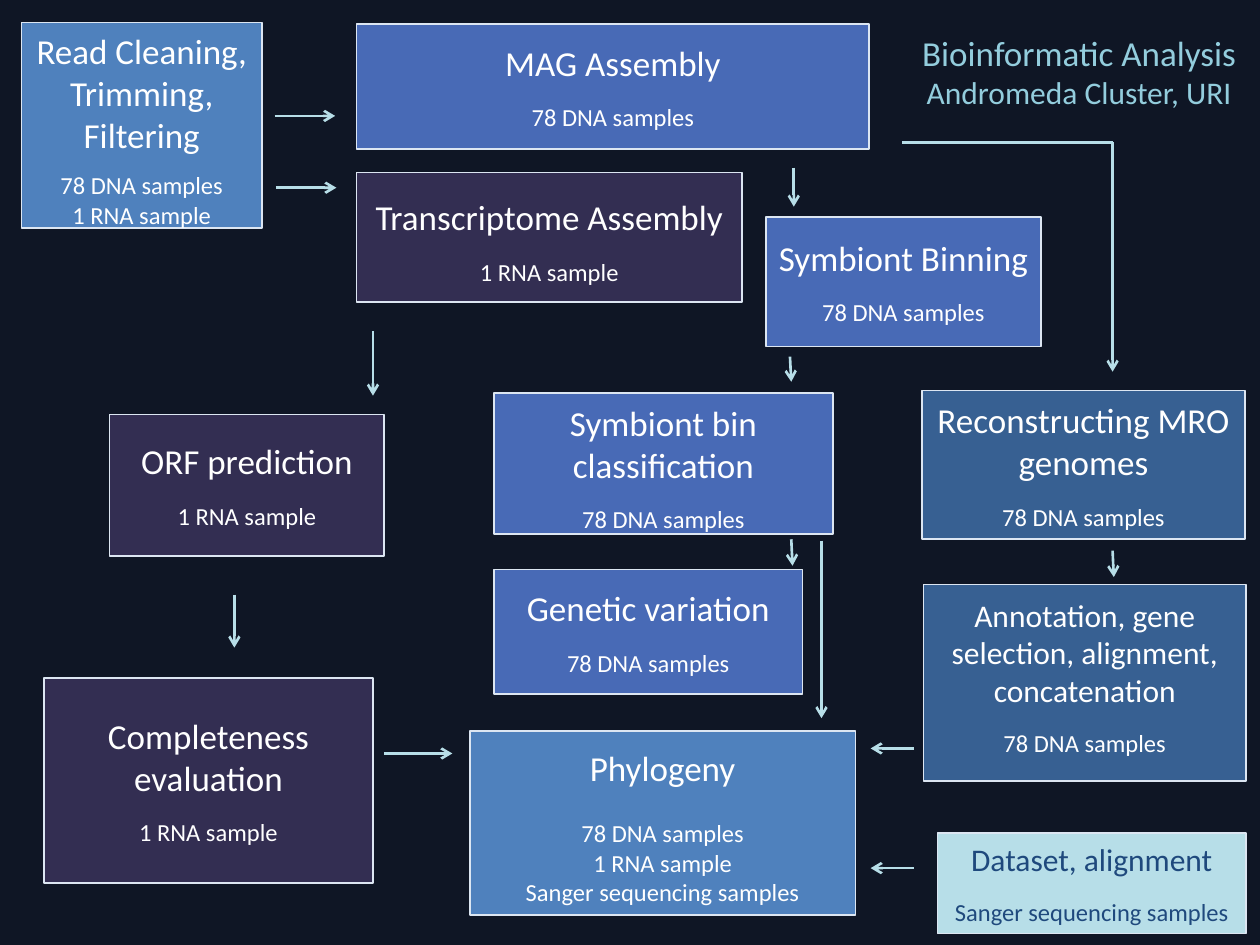
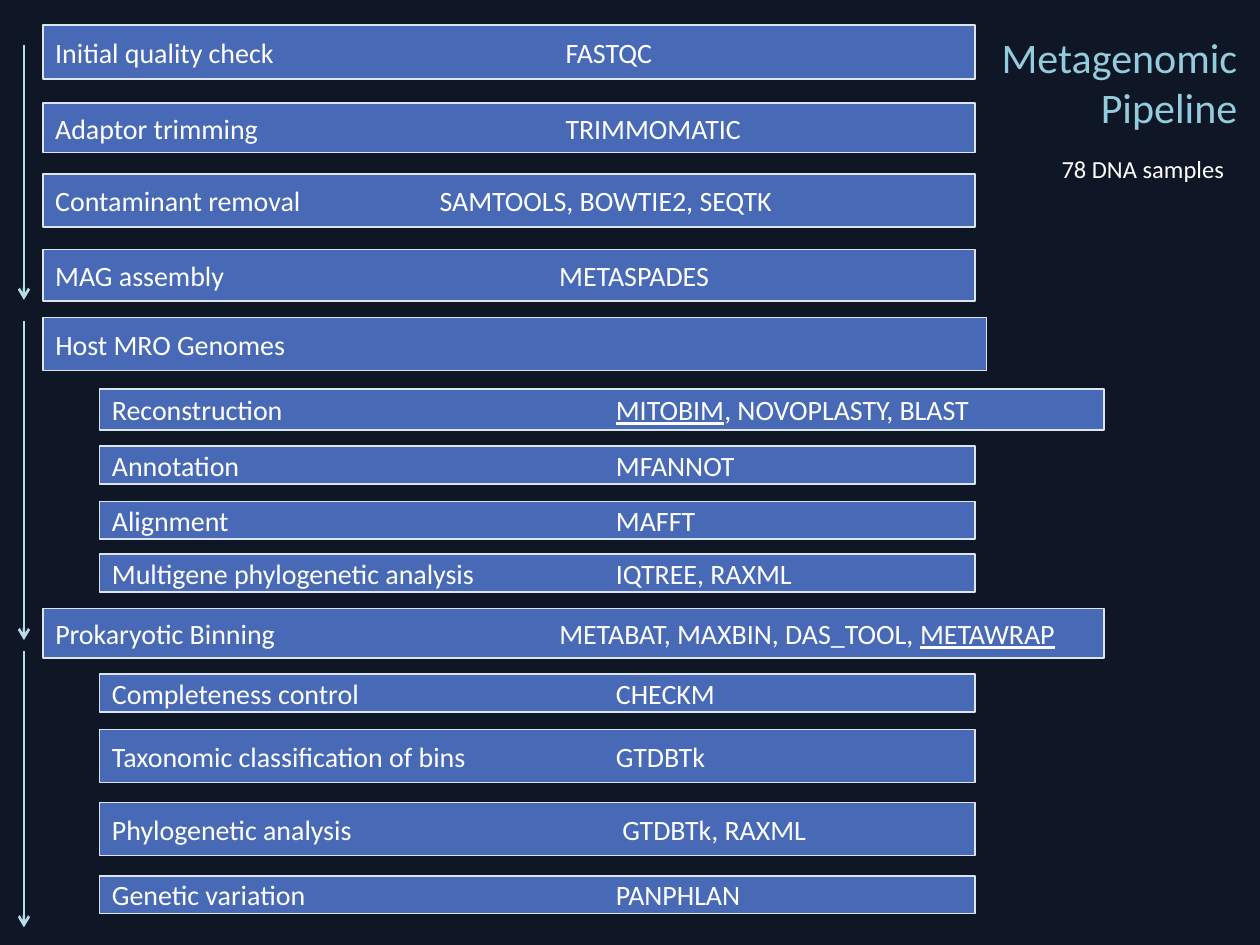
"""Build two slides on a bioinformatic workflow and its metagenomic pipeline."""
from lxml.etree import SubElement
from pptx import Presentation
from pptx.dml.color import RGBColor
from pptx.enum.shapes import MSO_CONNECTOR, MSO_SHAPE
from pptx.enum.text import MSO_ANCHOR as ANCHOR, PP_ALIGN as ALIGN
from pptx.oxml.ns import qn
from pptx.util import Inches, Pt

COLORS = {
    "background": "0F1625",
    "title": "93CDDD",
    "text": "FFFFFF",
    "dark_text": "1F497D",
    "border": "DCE6F2",
    "arrow": "B7DEE8",
    "shared": "4F81BD",
    "dna": "486AB6",
    "rna": "332E52",
    "host": "376092",
    "sanger": "B7DEE8",
}
FONT = "Calibri"
DNA = "78 DNA samples"
RNA = "1 RNA sample"
SANGER = "Sanger sequencing samples"

STEPS = [
    (0.17, 0.18, 1.91, 1.63, "shared", "Read Cleaning, Trimming, Filtering", [DNA, RNA],
     {"gap": 8.5, "drop": 0.03}),
    (2.83, 0.19, 4.07, 0.99, "dna", "MAG Assembly", [DNA], {}),
    (2.83, 1.37, 3.06, 1.03, "rna", "Transcriptome Assembly", [RNA], {"drop": 0.03}),
    (6.08, 1.72, 2.18, 1.03, "dna", "Symbiont Binning", [DNA], {}),
    (3.92, 3.12, 2.69, 1.12, "dna", "Symbiont bin classification", [DNA], {"drop": 0.03}),
    (3.92, 4.52, 2.45, 0.99, "dna", "Genetic variation", [DNA], {}),
    (0.87, 3.29, 2.18, 1.12, "rna", "ORF prediction", [RNA], {}),
    (0.35, 5.38, 2.61, 1.63, "rna", "Completeness evaluation", [RNA], {}),
    (7.32, 3.1, 2.56, 1.18, "host", "Reconstructing MRO genomes", [DNA], {}),
    (7.33, 4.64, 2.56, 1.56, "host", "Annotation, gene selection, alignment, concatenation",
     [DNA], {"size": 18, "drop": -0.05}),
    (3.73, 5.8, 3.06, 1.46, "shared", "Phylogeny", [DNA, RNA, SANGER],
     {"gap": 17, "drop": 0.03}),
    (7.44, 6.61, 2.45, 0.8, "sanger", "Dataset, alignment", [SANGER],
     {"size": 18, "color": "dark_text"}),
]
FLOW_ARROWS = [
    (2.18, 0.92, 2.66, 0.92),
    (2.19, 1.49, 2.67, 1.49),
    (6.3, 1.33, 6.3, 1.64),
    (6.27, 2.83, 6.28, 3.03),
    (6.28, 4.28, 6.29, 4.49),
    (6.52, 4.29, 6.52, 5.7),
    (2.96, 2.63, 2.96, 3.14),
    (1.86, 4.72, 1.86, 5.14),
    (3.05, 5.98, 3.59, 5.98),
    (8.83, 1.13, 8.83, 2.95),
    (8.83, 4.37, 8.84, 4.58),
    (7.25, 5.94, 6.91, 5.94),
    (7.25, 6.89, 6.91, 6.89),
]

MAIN_LEFT, NESTED_LEFT = 0.34, 0.79
BAR_RIGHT = 7.74
PIPELINE = [
    (MAIN_LEFT, 0.2, 0.43, "Initial quality check", "FASTQC", {"tab": 4.05}),
    (MAIN_LEFT, 0.82, 0.39, "Adaptor trimming", "TRIMMOMATIC", {"tab": 4.05}),
    (MAIN_LEFT, 1.38, 0.42, "Contaminant removal", "SAMTOOLS, BOWTIE2, SEQTK", {"tab": 3.05}),
    (MAIN_LEFT, 1.98, 0.41, "MAG assembly", "METASPADES", {}),
    (MAIN_LEFT, 2.52, 0.42, "Host MRO Genomes", "", {"right": 7.83}),
    (NESTED_LEFT, 3.09, 0.32, "Reconstruction", "MITOBIM, NOVOPLASTY, BLAST",
     {"right": 8.76, "underlined": "MITOBIM"}),
    (NESTED_LEFT, 3.54, 0.3, "Annotation", "MFANNOT", {}),
    (NESTED_LEFT, 3.98, 0.3, "Alignment", "MAFFT", {}),
    (NESTED_LEFT, 4.4, 0.3, "Multigene phylogenetic analysis", "IQTREE, RAXML", {}),
    (MAIN_LEFT, 4.83, 0.39, "Prokaryotic Binning", "METABAT, MAXBIN, DAS_TOOL, METAWRAP",
     {"right": 8.76, "underlined": "METAWRAP"}),
    (NESTED_LEFT, 5.35, 0.3, "Completeness control", "CHECKM", {}),
    (NESTED_LEFT, 5.79, 0.42, "Taxonomic classification of bins", "GTDBTk", {}),
    (NESTED_LEFT, 6.37, 0.42, "Phylogenetic analysis", "GTDBTk, RAXML", {"tab": 4.05}),
    (NESTED_LEFT, 6.95, 0.3, "Genetic variation", "PANPHLAN", {}),
]
STAGE_SPANS = [(0.36, 2.38), (2.55, 5.08), (5.17, 7.36)]


def rgb(name):
    """Return the named colour."""
    return RGBColor.from_string(COLORS[name])


def set_font(font, size, color="text"):
    """Give a font its typeface, size and colour."""
    font.name = FONT
    font.size = Pt(size)
    font.color.rgb = rgb(color)


def add_slide(prs, title_lines, box, align):
    """Add a dark slide with a title made of (text, size) lines."""
    s = prs.slides.add_slide(prs.slide_layouts[5])
    s.background.fill.solid()
    s.background.fill.fore_color.rgb = rgb("background")
    title = s.shapes.title
    title.left, title.top, title.width, title.height = map(Inches, box)
    title.text_frame.vertical_anchor = ANCHOR.MIDDLE
    p = title.text_frame.paragraphs[0]
    p.alignment = align
    for i, (text, size) in enumerate(title_lines):
        if i:
            p.add_line_break()
        r = p.add_run()
        r.text = text
        set_font(r.font, size, "title")
    return s


def add_box(s, left, top, width, height, fill):
    """Add a bordered rectangle and return its text frame."""
    sp = s.shapes.add_shape(MSO_SHAPE.RECTANGLE, *map(Inches, (left, top, width, height)))
    sp.shadow.inherit = False
    sp.fill.solid()
    sp.fill.fore_color.rgb = rgb(fill)
    sp.line.color.rgb = rgb("border")
    sp.line.width = Pt(1)
    tf = sp.text_frame
    tf.word_wrap = True
    tf.vertical_anchor = ANCHOR.MIDDLE
    return tf


def add_step(s, left, top, width, height, fill, heading, samples,
             size=20, gap=11, drop=0, color="text"):
    """Add a workflow step: a heading above its sample lines."""
    tf = add_box(s, left, top, width, height, fill)
    tf.margin_top = Inches(0.05 + drop)
    tf.margin_bottom = Inches(0.05 - drop)
    for i, text in enumerate([heading, *samples]):
        p = tf.add_paragraph() if i else tf.paragraphs[0]
        p.text = text
        p.alignment = ALIGN.CENTER
        if i == 0:
            p.space_after = Pt(gap)
        set_font(p.font, 14 if i else size, color)


def add_bar(s, left, top, height, step, tools, tab=4, right=BAR_RIGHT, underlined=""):
    """Add a pipeline bar: the step, then its tools at a tab stop."""
    tf = add_box(s, left, top, right - left, height, "dna")
    p = tf.paragraphs[0]
    p.alignment = ALIGN.LEFT
    if tools:
        stops = SubElement(p._p.get_or_add_pPr(), qn("a:tabLst"))
        SubElement(stops, qn("a:tab"), pos=str(Inches(tab)), algn="l")
    set_font(p.font, 16)
    text = f"{step}\t{tools}" if tools else step
    parts = text.partition(underlined) if underlined else [text]
    for part in filter(None, parts):
        r = p.add_run()
        r.text = part
        if part == underlined:
            r.font.underline = True


def add_line(s, x1, y1, x2, y2, arrow=True):
    """Add a straight line, with an arrowhead at its end by default."""
    line = s.shapes.add_connector(MSO_CONNECTOR.STRAIGHT, *map(Inches, (x1, y1, x2, y2)))
    line.line.color.rgb = rgb("arrow")
    line.line.width = Pt(1.5)
    if arrow:
        SubElement(line.line._get_or_add_ln(), qn("a:tailEnd"), type="arrow")
    SubElement(line._element.spPr, qn("a:effectLst"))


def add_note(s, left, top, width, height, text):
    """Add a centred line of plain text."""
    tf = s.shapes.add_textbox(*map(Inches, (left, top, width, height))).text_frame
    tf.word_wrap = True
    p = tf.paragraphs[0]
    p.text = text
    p.alignment = ALIGN.CENTER
    set_font(p.font, 14)


def build_workflow(prs):
    """Build the overview of the analysis."""
    s = add_slide(prs, [("Bioinformatic Analysis", 20), ("Andromeda Cluster, URI", 18)],
                  (7.16, 0.07, 2.81, 0.99), ALIGN.CENTER)
    for *step, options in STEPS:
        add_step(s, *step, **options)
    add_line(s, 7.16, 1.13, 8.83, 1.13, arrow=False)
    for ends in FLOW_ARROWS:
        add_line(s, *ends)


def build_pipeline(prs):
    """Build the list of pipeline steps and tools."""
    s = add_slide(prs, [("Metagenomic Pipeline", 24)], (7.74, 0.09, 2.18, 1.12), ALIGN.RIGHT)
    add_note(s, 8.18, 1.17, 1.78, 0.34, DNA)
    for *bar, options in PIPELINE:
        add_bar(s, *bar, **options)
    for start, end in STAGE_SPANS:
        add_line(s, 0.19, start, 0.19, end)


def main():
    """Create and save the presentation."""
    prs = Presentation()
    prs.slide_width, prs.slide_height = Inches(10), Inches(7.5)
    build_workflow(prs)
    build_pipeline(prs)
    prs.save("out.pptx")


if __name__ == "__main__":
    main()
